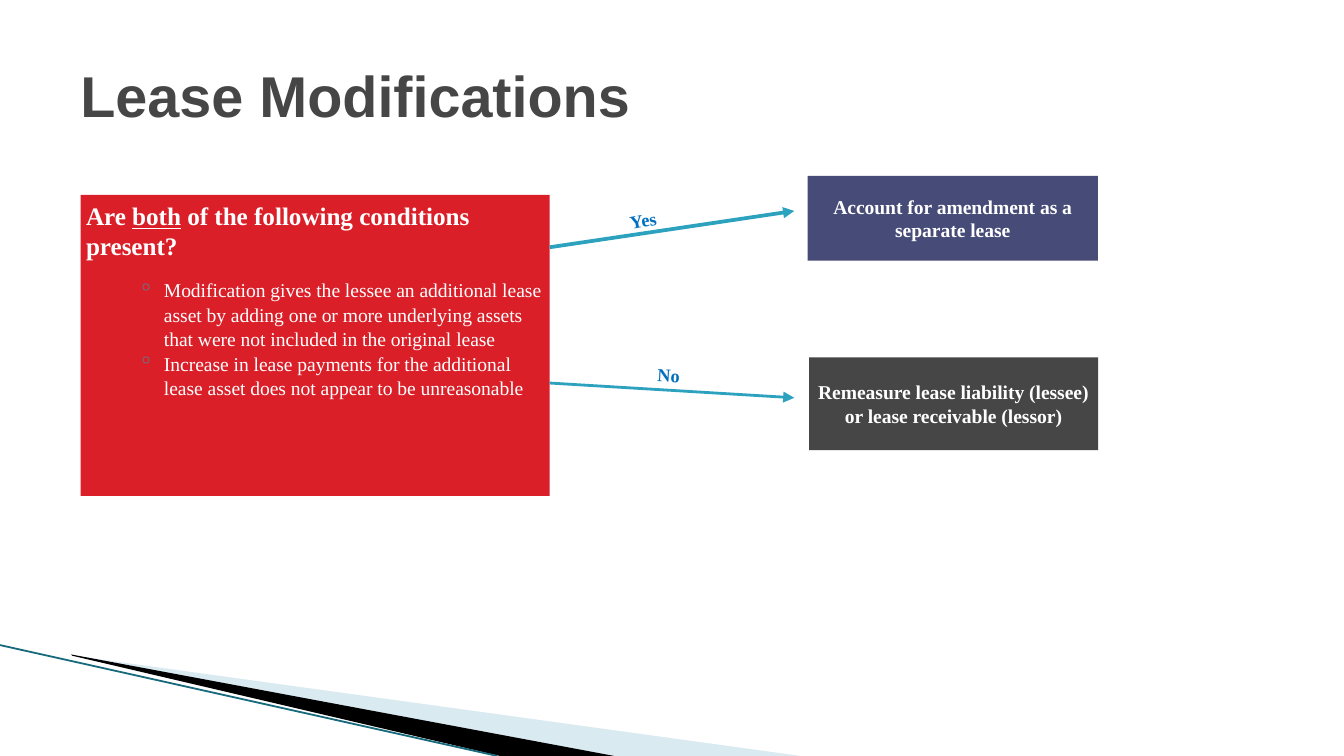
from dataclasses import dataclass
from lxml.etree import SubElement
from pptx import Presentation
from pptx.dml.color import RGBColor
from pptx.enum.shapes import MSO_CONNECTOR as Connector, MSO_SHAPE as Shape
from pptx.enum.text import MSO_ANCHOR as Anchor, PP_ALIGN as Align
from pptx.oxml.ns import qn
from pptx.util import Inches, Pt

COLUMNS, ROWS = 100, 56.25
CELL = Inches(0.1)


@dataclass(frozen=True)
class Theme:
    heading_font: str = "Arial"
    body_font: str = "Times New Roman"
    title_size: float = 30.8
    question_size: float = 13.5
    body_size: float = 10.5
    label_size: float = 9.8
    white: str = "FFFFFF"
    black: str = "000000"
    gray: str = "464646"
    red: str = "DA1F28"
    indigo: str = "474B78"
    teal: str = "2DA2BF"
    dark_teal: str = "17697C"
    pale_blue: str = "A0CBDC"
    label_blue: str = "0070C0"


THEME = Theme()


@dataclass(frozen=True)
class Box:
    left: float
    top: float
    width: float
    height: float

    def inner(self, left, top, width, height):
        return Box(self.left + left, self.top + top, width, height)

    def point(self, column, row):
        return round((self.left + column) * CELL), round((self.top + row) * CELL)

    def frame(self):
        return (*self.point(0, 0), round(self.width * CELL), round(self.height * CELL))


def color(value):
    return RGBColor.from_string(value)


def style_font(font, size, value, bold=True, name=THEME.body_font):
    font.name, font.size, font.bold = name, Pt(size), bold
    font.color.rgb = color(value)


def paint(shape, value, opacity=100):
    shape.shadow.inherit = False
    shape.fill.solid()
    shape.fill.fore_color.rgb = color(value)
    shape.line.fill.background()
    if opacity < 100:
        fill = shape.fill.fore_color._xFill
        SubElement(fill[0], qn("a:alpha"), val=str(opacity * 1000))


def prepare_text(shape, anchor=Anchor.TOP, inset=0.04):
    text_frame = shape.text_frame
    text_frame.word_wrap = True
    text_frame.vertical_anchor = anchor
    text_frame.margin_left = text_frame.margin_right = Inches(inset)
    text_frame.margin_top = text_frame.margin_bottom = Inches(0.04)
    return text_frame


def add_panel(slide, box, fill, anchor):
    shape = slide.shapes.add_shape(Shape.RECTANGLE, *box.frame())
    paint(shape, fill)
    return prepare_text(shape, anchor)


def add_line(slide, box, start, end, value, width, arrow=False):
    line = slide.shapes.add_connector(
        Connector.STRAIGHT, *box.point(*start), *box.point(*end))
    line.line.color.rgb = color(value)
    line.line.width = Pt(width)
    if arrow:
        SubElement(line.line._get_or_add_ln(), qn("a:tailEnd"), type="triangle")
    SubElement(line._element.spPr, qn("a:effectLst"))


def add_corner_sweep(slide, box):
    wedges = [
        ([(5.5, 0.8), (59.5, 8.25), (45.6, 8.25)], THEME.pale_blue, 40),
        ([(5.3, 0.7), (45.7, 8.25), (37.2, 8.25), (5.4, 0.8)], THEME.black, 100),
    ]
    for corners, value, opacity in wedges:
        start, *others = [box.point(*corner) for corner in corners]
        builder = slide.shapes.build_freeform(*start)
        builder.add_line_segments(others)
        paint(builder.convert_to_shape(), value, opacity)
    add_line(slide, box, (0, 0), (37, 8.25), THEME.dark_teal, 0.95)


def add_title(slide, box, text):
    title = slide.shapes.add_textbox(*box.frame())
    text_frame = prepare_text(title, Anchor.MIDDLE, 0.1)
    text_frame.text = text
    style_font(text_frame.paragraphs[0].runs[0].font, THEME.title_size,
               THEME.gray, name=THEME.heading_font)


def add_bullet(paragraph):
    properties = paragraph._p.get_or_add_pPr()
    properties.set("marL", str(Inches(0.58)))
    properties.set("indent", str(-Inches(0.19)))
    bullet_color = SubElement(properties, qn("a:buClr"))
    SubElement(bullet_color, qn("a:srgbClr"), val=THEME.teal)
    SubElement(properties, qn("a:buChar"), char="◦")


def add_question(slide, box, question, conditions):
    text_frame = add_panel(slide, box, THEME.red, Anchor.TOP)
    heading = text_frame.paragraphs[0]
    heading.alignment = Align.LEFT
    heading.space_after = Pt(9)
    for text, underlined in question:
        run = heading.add_run()
        run.text = text
        style_font(run.font, THEME.question_size, THEME.white)
        run.font.underline = underlined
    for condition in conditions:
        paragraph = text_frame.add_paragraph()
        paragraph.text = condition
        paragraph.alignment = Align.LEFT
        paragraph.level = 1
        paragraph.line_spacing = 1.04
        add_bullet(paragraph)
        style_font(paragraph.runs[0].font, THEME.body_size, THEME.white, False)


def add_outcome(slide, box, text, fill):
    text_frame = add_panel(slide, box, fill, Anchor.MIDDLE)
    text_frame.text = text
    paragraph = text_frame.paragraphs[0]
    paragraph.alignment = Align.CENTER
    style_font(paragraph.runs[0].font, THEME.body_size, THEME.white)


def add_answer(slide, box, text, rotation):
    label = slide.shapes.add_textbox(*box.frame())
    label.rotation = rotation
    text_frame = prepare_text(label)
    text_frame.text = text
    style_font(text_frame.paragraphs[0].runs[0].font, THEME.label_size,
               THEME.label_blue)


def add_decision(slide, box):
    add_question(
        slide, box.inner(0, 1.4, 34.9, 22.4),
        [("Are ", False), ("both", True),
         (" of the following conditions present?", False)],
        ["Modification gives the lessee an additional lease asset by adding one "
         "or more underlying assets that were not included in the original lease",
         "Increase in lease payments for the additional lease asset does not "
         "appear to be unreasonable"])
    add_outcome(slide, box.inner(54.1, 0, 21.6, 6.3),
                "Account for amendment as a separate lease", THEME.indigo)
    add_outcome(slide, box.inner(54.2, 13.5, 21.5, 6.9),
                "Remeasure lease liability (lessee) or lease receivable (lessor)",
                THEME.gray)
    for start_row, end_row, width in [(5.3, 2.6, 2), (15.4, 16.5, 1.5)]:
        add_line(slide, box, (34.9, start_row), (53.1, end_row),
                 THEME.teal, width, arrow=True)
    add_answer(slide, box.inner(40.5, 2, 3.7, 3), "Yes", 350)
    add_answer(slide, box.inner(42.5, 13.6, 2.9, 2.9), "No", 3)


def main():
    presentation = Presentation()
    presentation.slide_width = round(COLUMNS * CELL)
    presentation.slide_height = round(ROWS * CELL)
    slide = presentation.slides.add_slide(presentation.slide_layouts[6])
    page = Box(0, 0, COLUMNS, ROWS)
    add_corner_sweep(slide, page.inner(0, 48, COLUMNS, 8.25))
    add_title(slide, page.inner(5, 2.3, 90, 9.4), "Lease Modifications")
    add_decision(slide, page.inner(6, 13.1, 75.7, 23.8))
    presentation.save("out.pptx")


if __name__ == "__main__":
    main()
